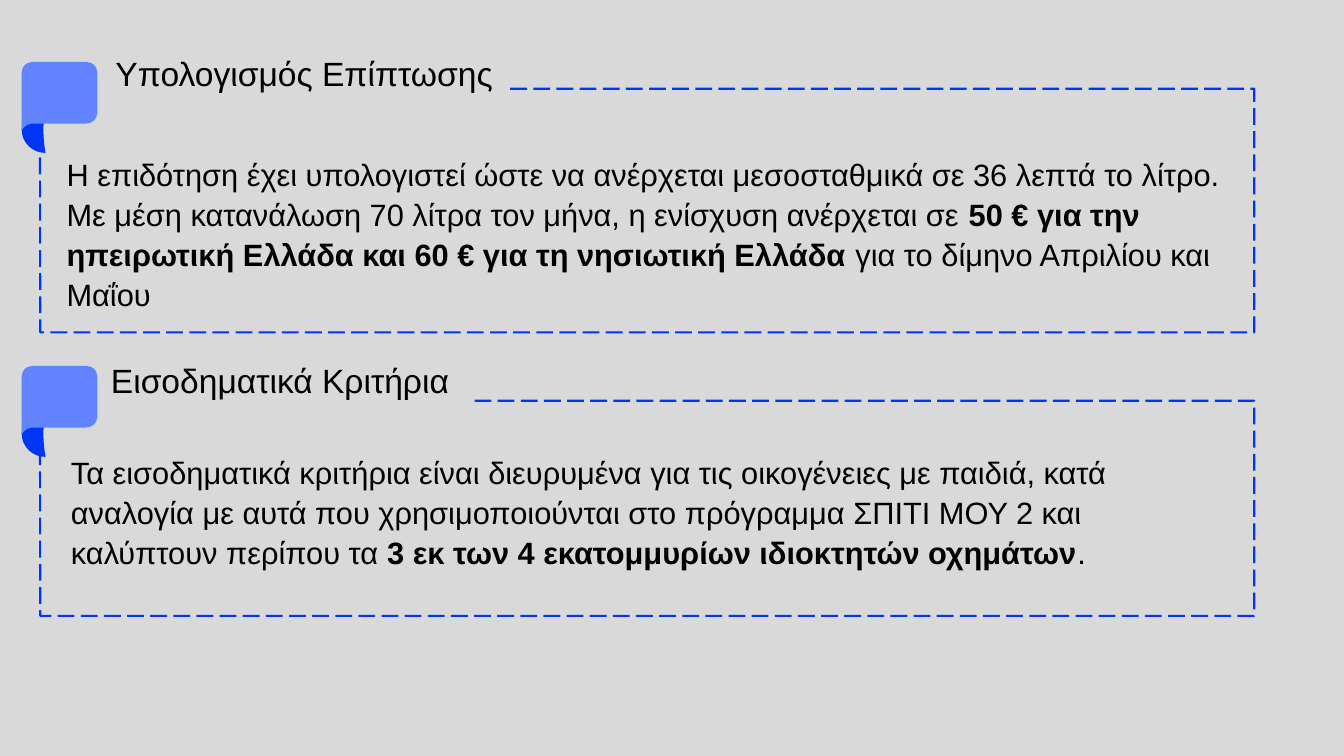
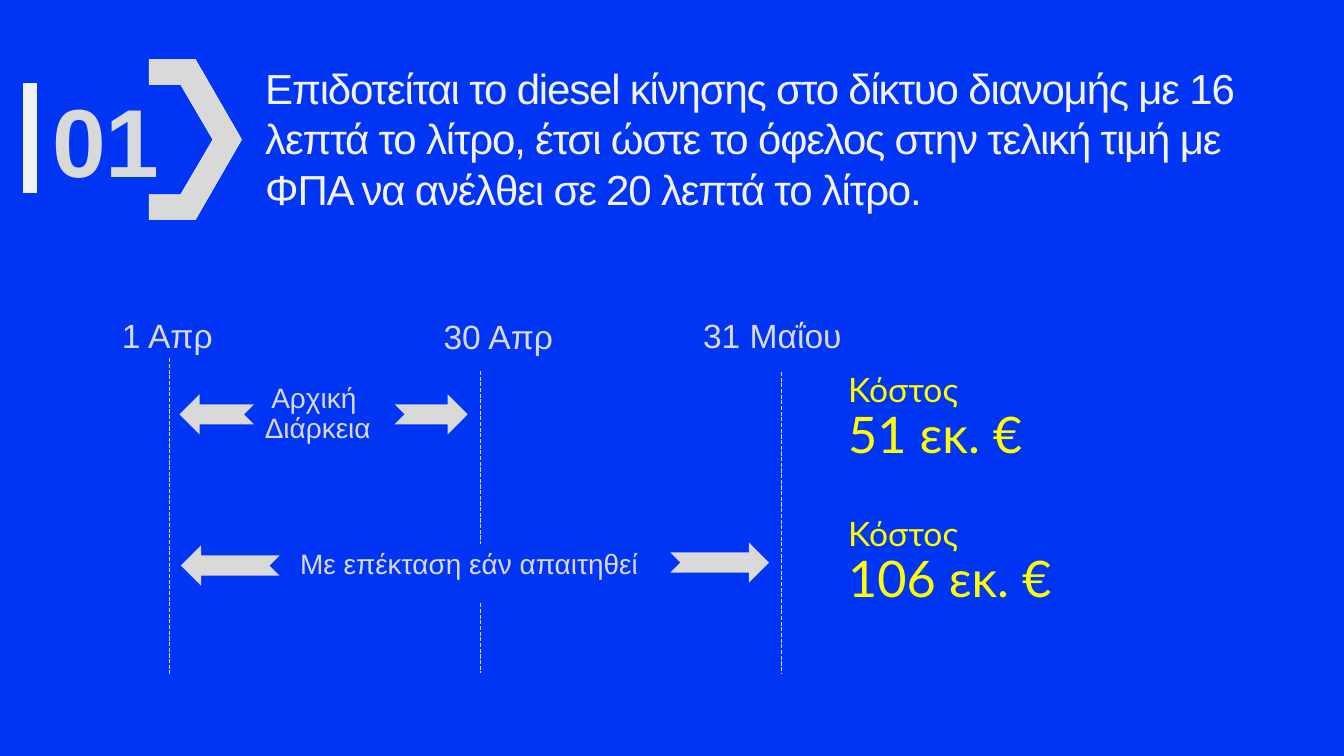
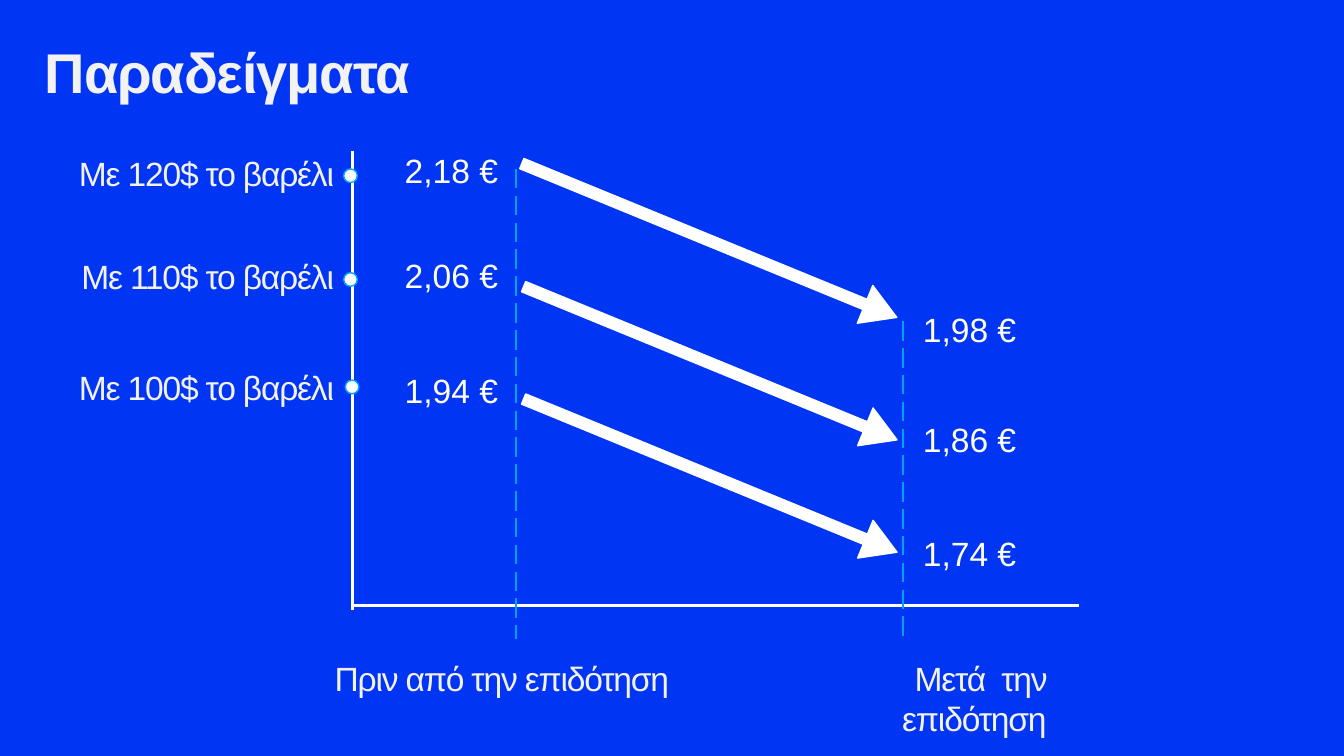
from lxml import etree
from pptx import Presentation
from pptx.dml.color import RGBColor
from pptx.enum.dml import MSO_LINE
from pptx.enum.shapes import MSO_CONNECTOR, MSO_SHAPE
from pptx.enum.text import MSO_ANCHOR, MSO_AUTO_SIZE, PP_ALIGN
from pptx.oxml.ns import qn
from pptx.util import Pt

BLUE = RGBColor(0x00, 0x35, 0xF3)
LIGHT_BLUE = RGBColor(0x61, 0x83, 0xFF)
CYAN = RGBColor(0x00, 0xA2, 0xFF)
GREY = RGBColor(0xD9, 0xD9, 0xD9)
PALE = RGBColor(0xF2, 0xF2, 0xF2)
WHITE = RGBColor(0xFF, 0xFF, 0xFF)
BLACK = RGBColor(0x00, 0x00, 0x00)
YELLOW = RGBColor(0xFF, 0xFF, 0x00)

STRAIGHT = MSO_CONNECTOR.STRAIGHT
LONG_DASH = MSO_LINE.LONG_DASH
RECTANGLE, OVAL = MSO_SHAPE.RECTANGLE, MSO_SHAPE.OVAL
NOTCHED_ARROW, DOWN_ARROW = MSO_SHAPE.NOTCHED_RIGHT_ARROW, MSO_SHAPE.DOWN_ARROW
TOP, MIDDLE = MSO_ANCHOR.TOP, MSO_ANCHOR.MIDDLE
FIT_SHAPE = MSO_AUTO_SIZE.SHAPE_TO_FIT_TEXT
LEFT, CENTER, RIGHT = PP_ALIGN.LEFT, PP_ALIGN.CENTER, PP_ALIGN.RIGHT

WIDTH, HEIGHT = 1920.24, 1080
TIGHT = -170  # character spacing, hundredths of a point

# Outlines: two numbers are a straight step, six are a Bezier step.
FOLD = [(31, 97), (31, 86, 32, 75, 35, 64), (15, 65, 0, 79, 0, 97),
        (0, 115, 15, 130, 34, 130), (32, 119, 31, 108, 31, 97)]
TAB = [(92, 0), (16, 0), (7, 0, 0, 6, 0, 15), (0, 98), (0, 98, 5, 88, 15, 88),
       (92, 88), (101, 88, 108, 81, 108, 73), (108, 15),
       (108, 6, 101, 0, 92, 0)]
CHEVRON = [(66, 0), (0, 0), (0, 36), (45, 36), (91, 114.5), (45, 193),
           (0, 193), (0, 229), (66, 229), (132, 114.5), (66, 0)]


def points(*values):
    return [Pt(value) for value in values]


def set_line(line, color, width, dash=None):
    line.color.rgb = color
    line.width = Pt(width)
    if dash:
        line.dash_style = dash


def paint(shape, fill=None, line=None):
    """Fill and outline a shape; line is (colour, width[, dash])."""
    shape.shadow.inherit = False
    if fill is None:
        shape.fill.background()
    else:
        shape.fill.solid()
        shape.fill.fore_color.rgb = fill
    if line:
        set_line(shape.line, *line)
    else:
        shape.line.fill.background()


def add_preset(slide, preset, box, fill, line=None, rotation=0):
    shape = slide.shapes.add_shape(preset, *points(*box))
    paint(shape, fill, line)
    shape.rotation = rotation
    return shape


def add_outline(slide, left, top, outline, fill=None, line=None):
    """Draw an outline from the given corner; it is closed when filled."""
    corners = [points(left + step[-2], top + step[-1]) for step in outline]
    builder = slide.shapes.build_freeform(*corners[0])
    builder.add_line_segments(corners[1:], close=fill is not None)
    shape = builder.convert_to_shape()
    paint(shape, fill, line)

    segments = list(shape._element.iter(qn("a:lnTo")))
    for segment, step in zip(segments, outline[1:]):
        if len(step) == 6:
            segment.tag = qn("a:cubicBezTo")
            for position in (0, 1):
                x, y = points(left + step[2 * position], top + step[2 * position + 1])
                control = etree.Element(qn("a:pt"), x=str(x - shape.left), y=str(y - shape.top))
                segment.insert(position, control)


def add_line(slide, start, end, color, width, dash=None):
    connector = slide.shapes.add_connector(STRAIGHT, *points(*start, *end))
    set_line(connector.line, color, width, dash)
    etree.SubElement(connector._element.spPr, qn("a:effectLst"))


def add_text(slide, box, lines, size, color, bold=False, font="Arial", align=LEFT,
             anchor=TOP, spacing=None, tracking=None, insets=(4.5, 4.5)):
    """Add a text box; each line is a string or a list of (text, size, bold)."""
    frame = slide.shapes.add_textbox(*points(*box)).text_frame
    frame.word_wrap = True
    frame.vertical_anchor = anchor
    frame.margin_left = frame.margin_right = Pt(insets[0])
    frame.margin_top = frame.margin_bottom = Pt(insets[1])
    for index, line in enumerate(lines):
        paragraph = frame.add_paragraph() if index else frame.paragraphs[0]
        paragraph.alignment = align
        if spacing:
            paragraph.line_spacing = spacing
        for text, run_size, run_bold in ([(line, size, bold)] if isinstance(line, str) else line):
            if text == "\n":
                paragraph.add_line_break()
                continue
            run = paragraph.add_run()
            run.text = text
            run.font.name = font
            run.font.size = Pt(run_size)
            run.font.bold = run_bold
            run.font.color.rgb = color
            if tracking:
                run._r.get_or_add_rPr().set("spc", str(tracking))
    return frame


def add_label(slide, box, lines, color, size=48, **options):
    frame = add_text(slide, box, lines, size, color, anchor=MIDDLE, spacing=0.9, **options)
    frame.auto_size = FIT_SHAPE


def add_tight_text(slide, box, text, size=48, **options):
    add_text(slide, box, [text], size, PALE, tracking=TIGHT, **options)


def new_slide(presentation, background):
    slide = presentation.slides.add_slide(presentation.slide_layouts[6])
    add_preset(slide, RECTANGLE, (0, 0, WIDTH, HEIGHT), background)
    return slide


def add_panel(slide, box, rule_start, rule_top, title, title_box, body, body_offset):
    """Dashed frame with a folded tab; everything is offset from the box corner."""
    left, top, width, height = box
    stub = rule_top + 16
    frame = [(rule_start, rule_top), (width, rule_top), (width, height),
             (26.5, height), (26.5, height * 0.7, 26, stub, 26, stub)]
    title_left, title_top, title_width = title_box
    add_label(slide, (left + title_left, top + title_top, title_width, 106), [title], BLACK)
    add_text(slide, (left + body_offset[0], top + body_offset[1], 1669, 209),
             [[(text, 44, bold) for text, bold in body]], 44, BLACK,
             spacing=Pt(57), insets=(7.2, 3.6))
    add_outline(slide, left, top, frame, line=(BLUE, 3, LONG_DASH))
    add_outline(slide, left, top, FOLD, BLUE)
    add_outline(slide, left, top, TAB, LIGHT_BLUE)


def build_criteria_slide(presentation):
    slide = new_slide(presentation, GREY)
    add_panel(
        slide, (31, 88.5, 1761, 386.25), 698, 38.25,
        "Υπολογισμός Επίπτωσης", (129.5, -34, 768),
        [("Η επιδότηση έχει υπολογιστεί ώστε να ανέρχεται μεσοσταθμικά σε 36 λεπτά "
          "το λίτρο. Με μέση κατανάλωση 70 λίτρα τον μήνα, η ενίσχυση ανέρχεται σε ", False),
         ("50 € για την ηπειρωτική Ελλάδα και 60 € για τη νησιωτική Ελλάδα ", True),
         ("για το δίμηνο Απριλίου και Μαΐου", False)], (57, 126.75))
    add_panel(
        slide, (31, 522.75, 1761, 357), 647, 49.75,
        "Εισοδηματικά Κριτήρια", (123, -28.75, 495),
        [("Τα εισοδηματικά κριτήρια είναι διευρυμένα για τις οικογένειες με παιδιά, "
          "κατά αναλογία με αυτά που χρησιμοποιούνται στο πρόγραμμα ΣΠΙΤΙ ΜΟΥ 2 "
          "και καλύπτουν περίπου τα ", False),
         ("3 εκ των 4 εκατομμυρίων ιδιοκτητών οχημάτων", True),
         (".", False)], (63.25, 117.25))


def add_measure_heading(slide, left, top, number, text):
    add_tight_text(slide, (left + 331.25, top, 1451, 244), text, size=60)
    add_outline(slide, left + 170, top, CHEVRON, GREY, (PALE, 0.75))
    add_text(slide, (left + 24, top + 46, 187, 137), [number], 138, GREY, bold=True,
             spacing=0.9, insets=(7.2, 3.6))
    add_line(slide, (left, top + 34), (left, top + 191.5), PALE, 20)


def add_timeline(slide, left, top):
    dates = [("1 Απρ", -71.5, 0, 178.5), ("30 Απρ", 388, 2.25, 178.5),
             ("31 Μαΐου", 758.75, 0, 211)]
    for text, x, y, width in dates:
        add_label(slide, (left + x, top + y, width, 60.5), [text], GREY)

    markers = [(0, 60.5, 512), (445, 78.5, 325.5), (445, 410.5, 510.5), (875.5, 80, 510.5)]
    for x, start, end in markers:
        add_line(slide, (left + x, top + start), (left + x, top + end), GREY, 0.75, LONG_DASH)

    arrows = [(15.25, 111.75, 106.5, 180), (322.5, 111.75, 104.5, 0),
              (17.25, 327.75, 141, 180), (716.5, 323.5, 141, 0)]
    for x, y, width, rotation in arrows:
        add_preset(slide, NOTCHED_ARROW, (left + x, top + y, width, 57.5), GREY,
                   rotation=rotation)

    add_label(slide, (left + 103, top + 93, 219.5, 95), ["Αρχική ", "Διάρκεια"], GREY,
              size=40, align=CENTER)
    add_label(slide, (left + 183, top + 330.5, 501, 52), ["Mε επέκταση εάν απαιτηθεί"],
              GREY, size=40)


def add_cost(slide, left, top, amount):
    add_label(slide, (left, top, 475, 139),
              [[("Κόστος ", 48, False), ("\n", 48, False), (amount, 72, False)]],
              YELLOW, font="Lato")


def build_measure_slide(presentation):
    slide = new_slide(presentation, BLUE)
    add_measure_heading(
        slide, 43.2, 84.9, "01",
        "Επιδοτείται το diesel κίνησης στο δίκτυο διανομής με 16 λεπτά το λίτρο, "
        "έτσι ώστε το όφελος στην τελική τιμή με ΦΠΑ να ανέλθει σε 20 λεπτά το λίτρο.")
    add_timeline(slide, 241.2, 451.4)
    for top, amount in ((529, "51 εκ. €"), (735, "106 εκ. €")):
        add_cost(slide, 1207.4, top, amount)


def add_axes(slide, left, top):
    add_line(slide, (left, top), (left, top + 656), WHITE, 4.75)
    add_line(slide, (left + 1039, top + 649.5), (left, top + 649.5), WHITE, 4.75)
    stages = [(234, 26, "Πριν από την επιδότηση", -43.25, 500.5),
              (787, 243.5, "Μετά  την επιδότηση", 581.75, 414.75)]
    for x, start, caption, caption_left, caption_width in stages:
        add_line(slide, (left + x, top + start), (left + x, top + 697), CYAN, 3.5, LONG_DASH)
        add_tight_text(slide, (left + caption_left, top + 720, caption_width, 59), caption,
                       align=RIGHT)


def add_price_drops(slide, left, top):
    # scenario, its top and height, dot left and top, price before and its top,
    # price after and its top, arrow left, top and length
    scenarios = [
        ("Με 120$ το βαρέλι", -1.5, 83.5, -12.25, 26, "2,18 €", 0.75,
         "1,98 €", 228.25, 481, -161.25, 579),
        ("Με 110$ το βαρέλι", 145.5, 59, -12.25, 174.25, "2,06 €", 150.5,
         "1,86 €", 386, 482.5, 15.25, 576.75),
        ("Με 100$ το βαρέλι", 303.75, 83.5, -10, 327.75, "1,94 €", 316,
         "1,74 €", 548.5, 482.5, 175.75, 576.75),
    ]
    for (scenario, label_top, label_height, dot_left, dot_top, before, before_top,
         after, after_top, arrow_left, arrow_top, arrow_length) in scenarios:
        add_tight_text(slide, (left - 447, top + label_top, 425.5, label_height), scenario,
                       align=RIGHT)
        for price, x, y in ((before, 70.5, before_top), (after, 810.75, after_top)):
            add_label(slide, (left + x, top + y, 144, 60.5), [price], WHITE)
        add_preset(slide, OVAL, (left + dot_left, top + dot_top, 19.5, 19.5), WHITE, (CYAN, 2))
        arrow = add_preset(slide, DOWN_ARROW,
                           (left + arrow_left, top + arrow_top, 58.25, arrow_length),
                           WHITE, (WHITE, 2), 292.3)
        arrow.adjustments[0] = 0.27
        arrow.adjustments[1] = 0.84


def build_examples_slide(presentation):
    slide = new_slide(presentation, BLUE)
    add_tight_text(slide, (59.75, 48.9, 1732.25, 100), "Παραδείγματα", size=80, bold=True)
    add_axes(slide, 503.3, 215.3)
    add_price_drops(slide, 503.3, 215.3)


def main():
    presentation = Presentation()
    presentation.slide_width, presentation.slide_height = points(WIDTH, HEIGHT)
    build_criteria_slide(presentation)
    build_measure_slide(presentation)
    build_examples_slide(presentation)
    presentation.save("out.pptx")


if __name__ == "__main__":
    main()
